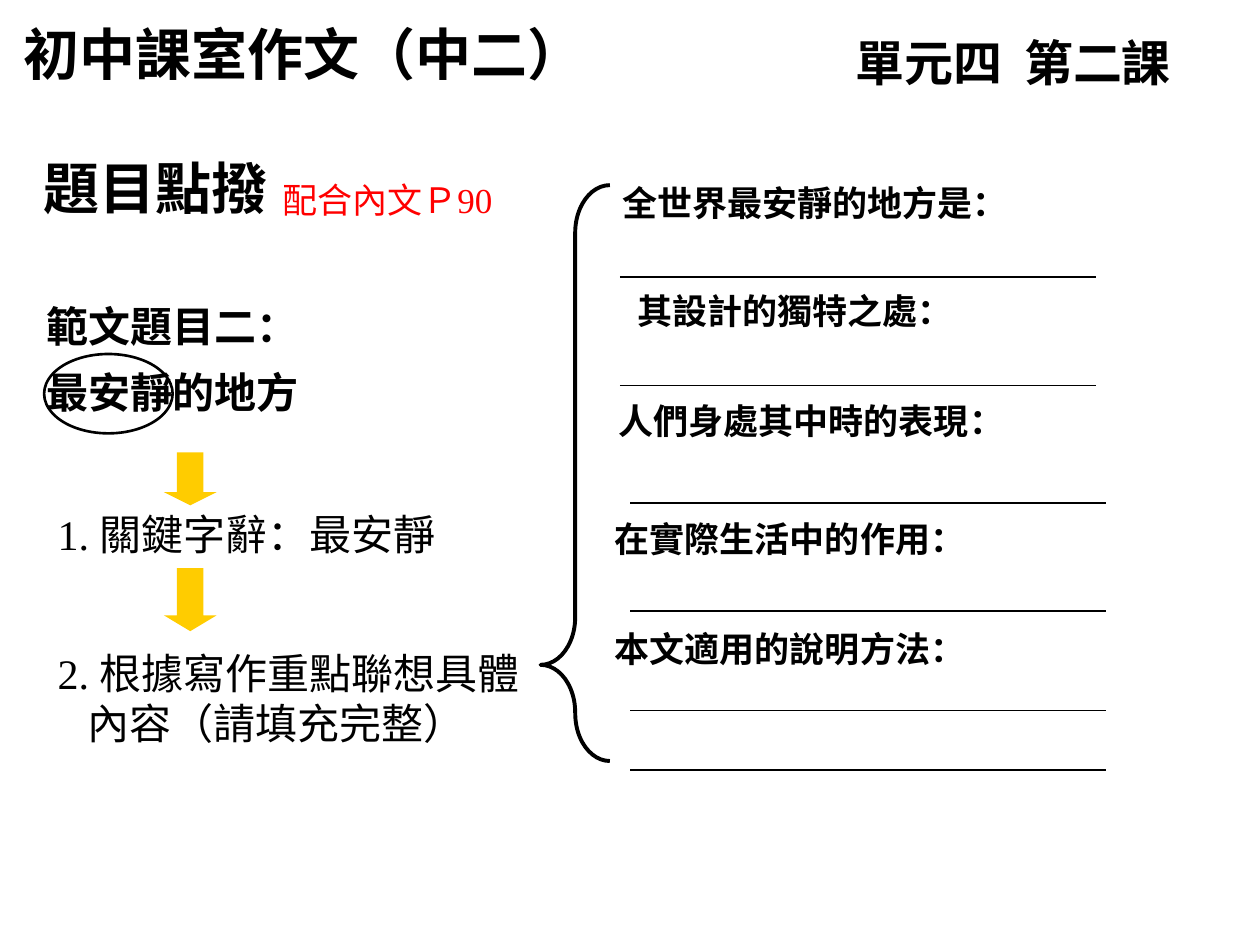
from collections import namedtuple
from dataclasses import dataclass

import pptx
import pptx.dml.color
import pptx.enum.shapes
import pptx.enum.text
import pptx.oxml
import pptx.oxml.ns
import pptx.util

Inches = pptx.util.Inches
Shapes = pptx.enum.shapes.MSO_SHAPE
Align = pptx.enum.text.PP_ALIGN
Box = namedtuple("Box", "left top width height")


@dataclass(frozen=True)
class Theme:
    ink: str = "000000"
    accent: str = "FF0000"
    arrow: str = "FFCC00"
    title: int = 32
    lesson: int = 28
    body: int = 24
    prompt: int = 20
    heading_font: str = "Karla"
    label_font: str = "Arial"
    topic_font: str = "DejaVu Sans"
    number_font: str = "Times New Roman"
    chinese_font: str = "Noto Sans CJK SC"


THEME = Theme()


def color(value):
    return pptx.dml.color.RGBColor.from_string(value)


def inside(box, left, top, width, height):
    return Box(box.left + left, box.top + top, width, height)


def lengths(box):
    return [Inches(value) for value in box]


def add_text(slide, box, lines, *, size, font, ink=THEME.ink, bold=False, wrap=True,
             align=Align.LEFT, spacing=None, hanging=0, tab=None):
    frame = slide.shapes.add_textbox(*lengths(box)).text_frame
    frame.word_wrap = wrap
    for index, line in enumerate(lines):
        paragraph = frame.paragraphs[0] if index == 0 else frame.add_paragraph()
        properties = paragraph._p.get_or_add_pPr()
        if index and hanging:
            properties.set("marL", str(Inches(hanging)))
        if tab:
            stops = pptx.oxml.parse_xml(
                f'<a:tabLst {pptx.oxml.ns.nsdecls("a")}>'
                f'<a:tab pos="{Inches(tab)}" algn="l"/></a:tabLst>')
            properties.append(stops)
        paragraph.alignment = align
        if spacing:
            paragraph.line_spacing = spacing
        run = paragraph.add_run()
        run.text = line
        run.font.name = font
        run.font.size = pptx.util.Pt(size)
        run.font.bold = bold
        run.font.color.rgb = color(ink)
        east_asian = pptx.oxml.parse_xml(
            f'<a:ea {pptx.oxml.ns.nsdecls("a")} typeface="{THEME.chinese_font}"/>')
        run._r.get_or_add_rPr().find(pptx.oxml.ns.qn("a:latin")).addnext(east_asian)


def add_shape(slide, kind, box, *, fill=None, line_width=None, adjustments=()):
    shape = slide.shapes.add_shape(kind, *lengths(box))
    shape.shadow.inherit = False
    for index, value in enumerate(adjustments):
        shape.adjustments[index] = value
    if fill:
        shape.fill.solid()
        shape.fill.fore_color.rgb = color(fill)
    else:
        shape.fill.background()
    if line_width:
        shape.line.color.rgb = color(THEME.ink)
        shape.line.width = pptx.util.Pt(line_width)
    else:
        shape.line.fill.background()


def add_rule(slide, left, top, width):
    rule = slide.shapes.add_connector(
        pptx.enum.shapes.MSO_CONNECTOR.STRAIGHT,
        Inches(left), Inches(top), Inches(left + width), Inches(top))
    rule.line.color.rgb = color(THEME.ink)
    rule.line.width = pptx.util.Pt(1)
    rule._element.spPr.append(
        pptx.oxml.parse_xml(f'<a:effectLst {pptx.oxml.ns.nsdecls("a")}/>'))


def draw_header(slide, box):
    add_text(slide, inside(box, 0, 0, 5.22, 0.63), ["初中課室作文（中二）"],
             size=THEME.title, font=THEME.heading_font, bold=True)
    add_text(slide, inside(box, 6.6, 0.1, 3.3, 0.57), ["單元四\t第二課"],
             size=THEME.lesson, font=THEME.heading_font, bold=True, tab=1.34)


def draw_topic(slide, box):
    add_text(slide, inside(box, 0, 0, 3.08, 0.63), ["題目點撥"],
             size=THEME.title, font=THEME.label_font, bold=True)
    add_text(slide, inside(box, 1.89, 0.2, 2.47, 0.43), ["配合內文Ｐ90"],
             size=THEME.prompt, font=THEME.number_font, ink=THEME.accent)
    add_text(slide, inside(box, 0.02, 1.05, 5, 1.14), ["範文題目二：", "最安靜的地方"],
             size=THEME.body, font=THEME.topic_font, bold=True, spacing=1.3)
    add_shape(slide, Shapes.OVAL, inside(box, 0.1, 1.64, 1.02, 0.63), line_width=1.5)


def draw_steps(slide, box):
    for top, height, head in ((0, 0.42, 0.25), (0.92, 0.5, 0.3)):
        add_shape(slide, Shapes.DOWN_ARROW, inside(box, 0.94, top, 0.42, height),
                  fill=THEME.arrow, adjustments=(0.5, head))
    add_text(slide, inside(box, 0, 0.4, 4.08, 0.5), ["1. 關鍵字辭：最安靜"],
             size=THEME.body, font=THEME.number_font)
    add_text(slide, inside(box, 0, 1.5, 4.17, 0.9),
             ["2. 根據寫作重點聯想具體", "內容（請填充完整）"],
             size=THEME.body, font=THEME.number_font, hanging=0.24)


def draw_prompts(slide, box):
    add_shape(slide, Shapes.LEFT_BRACE, inside(box, 0, 0.08, 0.55, box.height - 0.08),
              line_width=2.25, adjustments=(0.687, 0.833))
    add_text(slide, inside(box, 0.55, 0, 4.72, 0.43), ["全世界最安靜的地方是："],
             size=THEME.prompt, font=THEME.topic_font, bold=True)
    centered_prompts = (
        ("其設計的獨特之處：", 0.53, 0.86, 2.7),
        ("人們身處其中時的表現：", 0.52, 1.73, 3.26),
        ("在實際生活中的作用：", 0.49, 2.67, 2.98),
        ("本文適用的說明方法：", 0.49, 3.54, 2.98),
    )
    for prompt, left, top, width in centered_prompts:
        add_text(slide, inside(box, left, top, width, 0.43), [prompt],
                 size=THEME.prompt, font=THEME.label_font, bold=True,
                 wrap=False, align=Align.CENTER)
    answer_rules = ((0.63, (0.81, 1.67)), (0.71, (2.6, 3.46, 4.25, 4.72)))
    for left, tops in answer_rules:
        for top in tops:
            add_rule(slide, box.left + left, box.top + top, 3.78)


def main():
    presentation = pptx.Presentation()
    presentation.slide_width = Inches(10)
    presentation.slide_height = Inches(7.5)
    slide = presentation.slides.add_slide(presentation.slide_layouts[6])
    draw_header(slide, Box(0.09, 0.11, 9.9, 0.67))
    draw_topic(slide, Box(0.25, 1.17, 5, 2.27))
    draw_steps(slide, Box(0.36, 3.59, 4.17, 2.4))
    draw_prompts(slide, Box(4.29, 1.39, 5.27, 4.65))
    presentation.save("out.pptx")


if __name__ == "__main__":
    main()
